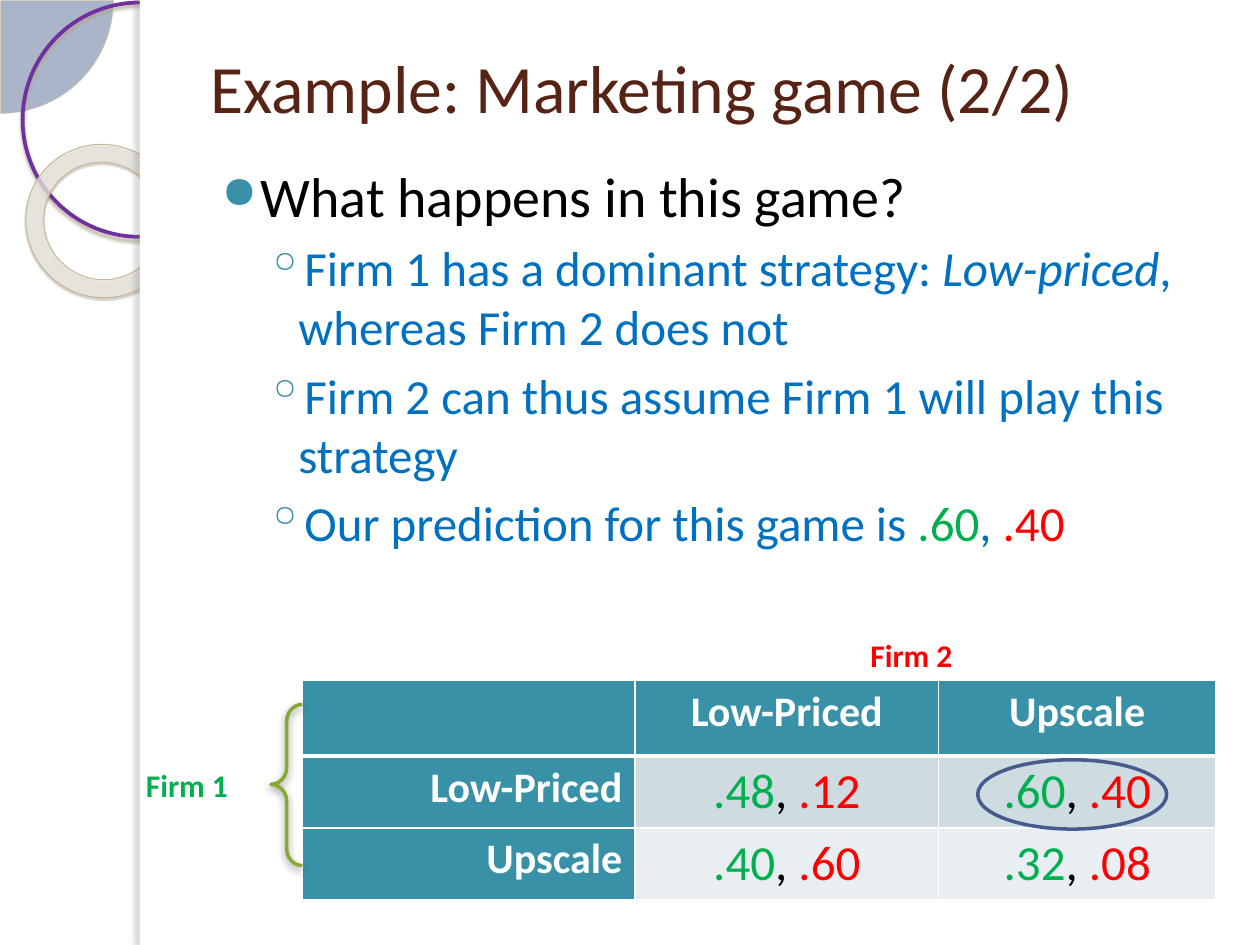
from dataclasses import dataclass
from typing import Optional

import lxml.etree
import pptx
import pptx.dml.color
import pptx.enum.shapes
import pptx.enum.text
import pptx.oxml.ns
import pptx.util

Inches = pptx.util.Inches
Pt = pptx.util.Pt
RGBColor = pptx.dml.color.RGBColor
Align = pptx.enum.text.PP_ALIGN
Anchor = pptx.enum.text.MSO_ANCHOR
ShapeType = pptx.enum.shapes.MSO_SHAPE
qn = pptx.oxml.ns.qn

FONT = "Calibri"
WHITE = RGBColor(0xFF, 0xFF, 0xFF)
BLACK = RGBColor(0, 0, 0)
NAVY = RGBColor(0x00, 0x20, 0x60)
TAN = RGBColor(0xD3, 0xC3, 0x9F)
PURPLE = RGBColor(0x70, 0x30, 0xA0)
CREAM = RGBColor(0xEB, 0xE9, 0xE1)
SAND = RGBColor(0xC7, 0xB8, 0x93)
BROWN = RGBColor(0x57, 0x23, 0x14)
TEAL = RGBColor(0x38, 0x91, 0xA7)
BLUE = RGBColor(0x00, 0x70, 0xC0)
GREEN = RGBColor(0x00, 0xB0, 0x50)
RED = RGBColor(0xFF, 0, 0)
OLIVE = RGBColor(0x84, 0xAA, 0x33)
INDIGO = RGBColor(0x47, 0x5A, 0x8D)
BAND_DARK = RGBColor(0xCE, 0xDC, 0xE1)
BAND_LIGHT = RGBColor(0xE8, 0xEE, 0xF1)


@dataclass(frozen=True)
class Shadow:
    color: str
    opacity: int
    blur: float
    distance: float
    angle: int


@dataclass(frozen=True)
class Figure:
    kind: int
    box: tuple
    fill: Optional[RGBColor] = None
    opacity: int = 100
    line: Optional[RGBColor] = None
    weight: float = 0
    adjustments: tuple = ()
    rotation: float = 0
    shadow: Optional[Shadow] = None


@dataclass(frozen=True)
class Piece:
    text: str
    color: RGBColor
    size: float
    bold: bool = False
    italic: bool = False


@dataclass(frozen=True)
class Bullet:
    symbol: str
    scale: int
    margin: float
    hanging: float


MAIN_BULLET = Bullet("●", 80, 0.4, 0.31)
SUB_BULLET = Bullet("◦", 100, 0.7, 0.26)

DECORATIONS = [
    Figure(ShapeType.PIE, (-0.89, -0.89, 1.79, 1.79), NAVY, 33, TAN, 0.25, (0, 54)),
    Figure(ShapeType.OVAL, (0.18, 0.02, 1.86, 1.86), line=PURPLE, weight=2.15,
           shadow=Shadow("B0A68F", 85, 2, 2, 90)),
    Figure(ShapeType.DONUT, (0.2, 1.15, 1.23, 1.21), CREAM, 75, SAND, 0.58, (0.118,), 38.6,
           Shadow("5A5444", 35, 1, 1.2, 75)),
    Figure(ShapeType.RECTANGLE, (1.11, 0, 8.89, 7.5), WHITE),
    Figure(ShapeType.RECTANGLE, (1.11, 0, 0.08, 7.5), WHITE,
           shadow=Shadow("736F63", 25, 3, 3, 180)),
]
BRACE = Figure(ShapeType.RIGHT_BRACE, (2.15, 5.59, 0.25, 1.28), line=OLIVE, weight=2,
               adjustments=(0.532, 0.504), rotation=180,
               shadow=Shadow("000000", 43, 5, 2, 90))
OUTCOME_RING = Figure(ShapeType.OVAL, (7.76, 6.03, 1.5, 0.55), line=INDIGO, weight=2)

BODY = [
    (MAIN_BULLET, [Piece("What happens in this game?", BLACK, 32)]),
    (SUB_BULLET, [Piece("Firm 1 has a dominant strategy: ", BLUE, 28),
                  Piece("Low-priced", BLUE, 28, italic=True),
                  Piece(", whereas Firm 2 does not", BLUE, 28)]),
    (SUB_BULLET, [Piece("Firm 2 can thus assume Firm 1 will play this strategy", BLUE, 28)]),
    (SUB_BULLET, [Piece("Our prediction for this game is ", BLUE, 28),
                  Piece(".60", GREEN, 28), Piece(", ", BLUE, 28), Piece(".40", RED, 28)]),
]
STRATEGIES = ["Low-Priced", "Upscale"]
PAYOFFS = [[(".48", ".12"), (".60", ".40")], [(".40", ".60"), (".32", ".08")]]
COLUMN_WIDTHS = [2.64, 2.41, 2.2]
ROW_HEIGHTS = [0.6, 0.57, 0.57]


def add_child(parent, tag: str, **attributes):
    return lxml.etree.SubElement(
        parent, qn(tag), {name: str(value) for name, value in attributes.items()})


def draw_figure(slide, figure: Figure) -> None:
    shape = slide.shapes.add_shape(figure.kind, *map(Inches, figure.box))
    shape.rotation = figure.rotation
    for index, value in enumerate(figure.adjustments):
        shape.adjustments[index] = value
    if figure.fill is None:
        shape.fill.background()
    else:
        shape.fill.solid()
        shape.fill.fore_color.rgb = figure.fill
        if figure.opacity < 100:
            color = shape._element.spPr.find(qn("a:solidFill"))[0]
            add_child(color, "a:alpha", val=figure.opacity * 1000)
    if figure.line is None:
        shape.line.fill.background()
    else:
        shape.line.color.rgb = figure.line
        shape.line.width = Pt(figure.weight)
    shape.shadow.inherit = False
    if figure.shadow:
        shadow = figure.shadow
        effects = shape._element.spPr.find(qn("a:effectLst"))
        outer = add_child(effects, "a:outerShdw", blurRad=int(Pt(shadow.blur)),
                          dist=int(Pt(shadow.distance)), dir=shadow.angle * 60000,
                          algn="tl", rotWithShape=0)
        color = add_child(outer, "a:srgbClr", val=shadow.color)
        add_child(color, "a:alpha", val=shadow.opacity * 1000)


def write_pieces(paragraph, pieces: list) -> None:
    for piece in pieces:
        run = paragraph.add_run()
        run.text = piece.text
        run.font.name = FONT
        run.font.size = Pt(piece.size)
        run.font.bold = piece.bold
        run.font.italic = piece.italic
        run.font.color.rgb = piece.color


def add_text_frame(slide, box: tuple, anchor=Anchor.TOP):
    frame = slide.shapes.add_textbox(*map(Inches, box)).text_frame
    frame.word_wrap = True
    frame.vertical_anchor = anchor
    return frame


def set_bullet(paragraph, bullet: Bullet) -> None:
    properties = paragraph._p.get_or_add_pPr()
    properties.set("marL", str(Inches(bullet.margin)))
    properties.set("indent", str(-Inches(bullet.hanging)))
    color = add_child(properties, "a:buClr")
    add_child(color, "a:srgbClr", val=str(TEAL))
    add_child(properties, "a:buSzPct", val=bullet.scale * 1000)
    add_child(properties, "a:buChar", char=bullet.symbol)


def draw_body(slide) -> None:
    frame = add_text_frame(slide, (1.57, 1.23, 8.43, 5.6))
    for index, (bullet, pieces) in enumerate(BODY):
        paragraph = frame.add_paragraph() if index else frame.paragraphs[0]
        set_bullet(paragraph, bullet)
        if index:
            paragraph.level = 1
            paragraph.space_before = Pt(5.5)
        write_pieces(paragraph, pieces)


def style_cell(cell, fill: RGBColor, bottom_weight: float, top_weight: float) -> None:
    properties = cell._tc.get_or_add_tcPr()
    weights = {"a:lnL": 1, "a:lnR": 1, "a:lnT": top_weight, "a:lnB": bottom_weight}
    for tag, weight in weights.items():
        line = add_child(properties, tag, w=int(Pt(weight)))
        add_child(add_child(line, "a:solidFill"), "a:srgbClr", val=str(WHITE))
    cell.fill.solid()
    cell.fill.fore_color.rgb = fill


def draw_payoff_table(slide) -> None:
    table = slide.shapes.add_table(
        3, 3, Inches(2.4), Inches(5.4),
        Inches(sum(COLUMN_WIDTHS)), Inches(sum(ROW_HEIGHTS))).table
    for column, width in zip(table.columns, COLUMN_WIDTHS):
        column.width = Inches(width)
    for row, height in zip(table.rows, ROW_HEIGHTS):
        row.height = Inches(height)
    for row in range(3):
        for column in range(3):
            cell = table.cell(row, column)
            is_header = row == 0 or column == 0
            fill = TEAL if is_header else (BAND_DARK, BAND_LIGHT)[row - 1]
            style_cell(cell, fill, 3 if row == 0 else 1, 3 if row == 1 else 1)
            paragraph = cell.text_frame.paragraphs[0]
            paragraph.alignment = Align.CENTER if column else Align.RIGHT
            if not is_header:
                first, second = PAYOFFS[row - 1][column - 1]
                write_pieces(paragraph, [Piece(first, GREEN, 28), Piece(", ", BLACK, 28),
                                         Piece(second, RED, 28)])
            elif row or column:
                label = STRATEGIES[max(row, column) - 1]
                write_pieces(paragraph, [Piece(label, WHITE, 24, bold=True)])


def main() -> None:
    presentation = pptx.Presentation()
    presentation.slide_width = Inches(10)
    presentation.slide_height = Inches(7.5)
    slide = presentation.slides.add_slide(presentation.slide_layouts[6])
    for figure in DECORATIONS:
        draw_figure(slide, figure)
    title = add_text_frame(slide, (1.57, 0.3, 8.2, 0.77), Anchor.MIDDLE)
    write_pieces(title.paragraphs[0], [Piece("Example: Marketing game (2/2)", BROWN, 38.7)])
    draw_body(slide)
    draw_payoff_table(slide)
    draw_figure(slide, BRACE)
    for label, left, top, color in [("Firm 1", 1.06, 6.03, GREEN), ("Firm 2", 6.81, 5, RED)]:
        frame = add_text_frame(slide, (left, top, 1.26, 0.4))
        write_pieces(frame.paragraphs[0], [Piece(label, color, 18, bold=True)])
    draw_figure(slide, OUTCOME_RING)
    presentation.save("out.pptx")


if __name__ == "__main__":
    main()
